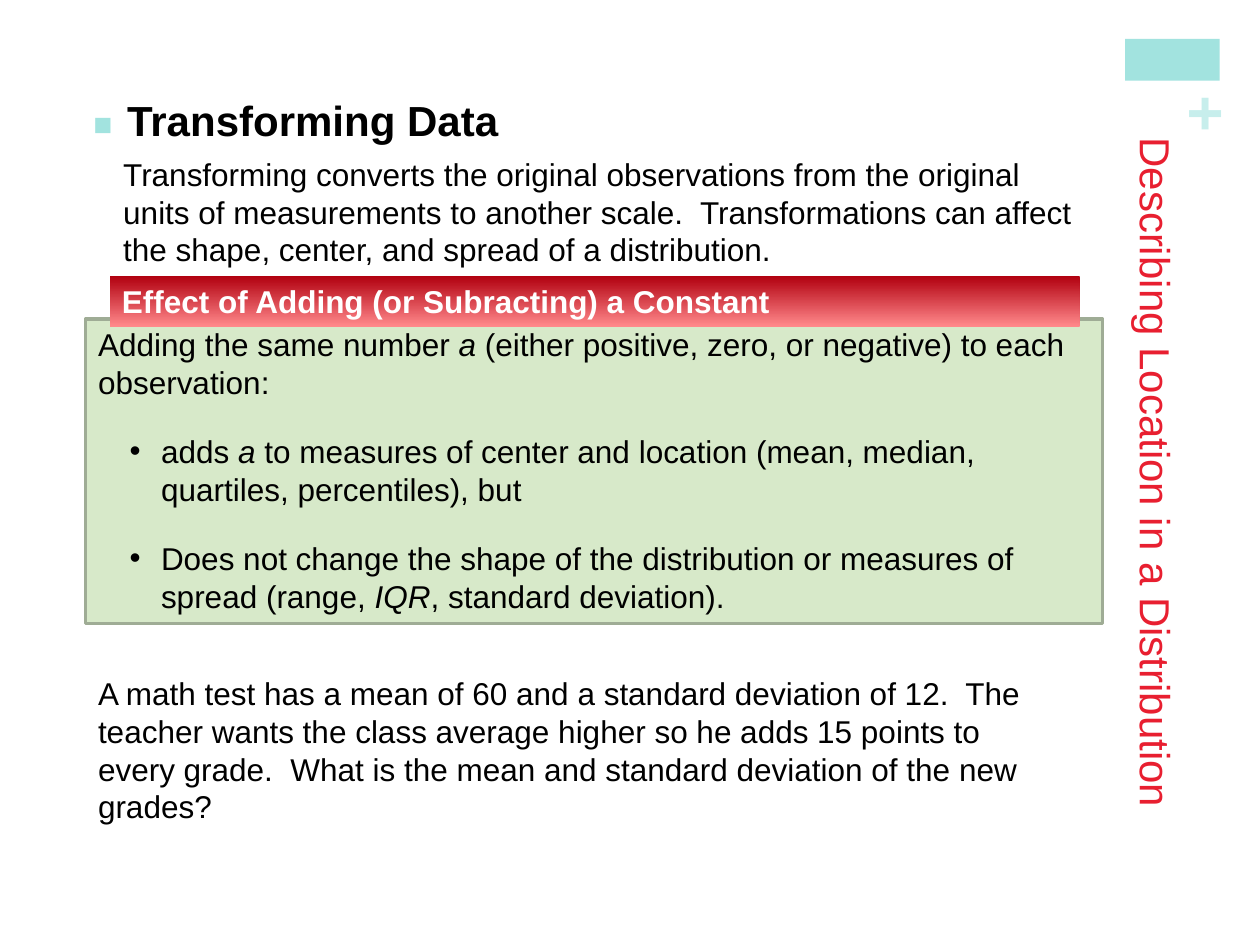
import pptx
import pptx.util
import pptx.dml.color
import pptx.enum.text
import pptx.enum.shapes
import lxml.etree

Inches, Pt = pptx.util.Inches, pptx.util.Pt
RECT = pptx.enum.shapes.MSO_SHAPE.RECTANGLE


def color(code):
    return pptx.dml.color.RGBColor.from_string(code)


def write(shape, *paras, size=18, ink="000000", bold=None, after=0, before=0,
          inset=None, bullets=(), mark="•", tint=None, left=0.5, vert=None):
    """Fill a shape with paragraphs; every second piece split by * is italic."""
    frame = shape.text_frame
    frame.word_wrap = True
    frame.auto_size = pptx.enum.text.MSO_AUTO_SIZE.NONE
    frame.vertical_anchor = pptx.enum.text.MSO_ANCHOR.TOP
    if inset is not None:
        frame.margin_left = frame.margin_right = Inches(inset)
        frame.margin_top = frame.margin_bottom = Inches(inset)
    if vert:
        frame._txBody.bodyPr.set("vert", vert)
    for n, text in enumerate(paras):
        para = frame.add_paragraph() if n else frame.paragraphs[0]
        para.alignment = pptx.enum.text.PP_ALIGN.LEFT
        para.line_spacing = 1.0
        para.space_before, para.space_after = Pt(before), Pt(after)
        if n in bullets:
            props = para._p.get_or_add_pPr()
            props.set("marL", str(Inches(left)))
            props.set("indent", str(-Inches(0.25)))
            ns = "{" + props.nsmap["a"] + "}"
            if tint:
                hue = lxml.etree.SubElement(props, ns + "buClr")
                lxml.etree.SubElement(hue, ns + "srgbClr", val=tint)
                lxml.etree.SubElement(props, ns + "buSzPct", val="75000")
            lxml.etree.SubElement(props, ns + "buFont", typeface="Arial")
            lxml.etree.SubElement(props, ns + "buChar", char=mark)
        for i, piece in enumerate(text.split("*")):
            run = para.add_run()
            run.text = piece
            font = run.font
            font.name, font.size, font.bold = "Arial", Pt(size), bold
            font.italic = i % 2 == 1
            font.color.rgb = color(ink)


deck = pptx.Presentation()
deck.slide_width, deck.slide_height = Inches(10), Inches(7.5)
slide = deck.slides.add_slide(deck.slide_layouts[1])
shapes = slide.shapes

# Corner decoration
bar = shapes.add_shape(RECT, Inches(8.93), Inches(0.31), Inches(0.75), Inches(0.33))
bar.shadow.inherit = False
bar.fill.solid()
bar.fill.fore_color.rgb = color("A2E3DF")
bar.line.fill.background()

plus = shapes.add_textbox(Inches(9.4), Inches(0.61), Inches(0.28), Inches(0.61))
plus.rotation = 270
write(plus, "+", size=36, ink="C7EEEC", bold=True, inset=0)

# Vertical title and heading
title = shapes.title
title.left, title.top = Inches(8.74), Inches(1.04)
title.width, title.height = Inches(0.74), Inches(6.18)
write(title, "Describing Location in a Distribution", size=24, ink="E81F30",
      vert="eaVert")

body = slide.placeholders[1]
body.left, body.top = Inches(4.01), Inches(-2.68)
body.width, body.height = Inches(1.41), Inches(8.07)
body.rotation = 270
write(body, "Transforming Data", size=24, bold=True, before=20,
      bullets=[0], mark="■", tint="A2E3DF", left=0.25, vert="eaVert")

# Introduction
intro = shapes.add_textbox(Inches(0.88), Inches(1.18), Inches(7.87), Inches(1.35))
write(intro, "Transforming converts the original observations from the original "
      "units of measurements to another scale.  Transformations can affect "
      "the shape, center, and spread of a distribution.")

# Rule panel with its banner
panel = shapes.add_shape(RECT, Inches(0.68), Inches(2.53), Inches(8.07), Inches(2.42))
panel.shadow.inherit = False
panel.fill.solid()
panel.fill.fore_color.rgb = color("D7E9C9")
panel.line.color.rgb = color("9FAC95")
panel.line.width = Pt(2)
write(panel,
      "Adding the same number *a* (either positive, zero, or negative) to each "
      "observation:",
      "adds *a* to measures of center and location (mean, median, quartiles, "
      "percentiles), but",
      "Does not change the shape of the distribution or measures of spread "
      "(range, *IQR*, standard deviation).",
      after=18, bullets=[1, 2])

banner = shapes.add_shape(RECT, Inches(0.87), Inches(2.19), Inches(7.7), Inches(0.4))
banner.shadow.inherit = False
banner.line.fill.background()
banner.fill.gradient()
banner.fill.gradient_angle = 270
for stop, code in zip(banner.fill.gradient_stops, ["B1000F", "FF888B"]):
    stop.color.rgb = color(code)
write(banner, "Effect of Adding (or Subracting) a Constant", ink="FFFFFF", bold=True)

# Question
task = shapes.add_textbox(Inches(0.68), Inches(5.3), Inches(7.77), Inches(1.31))
write(task, "A math test has a mean of 60 and a standard deviation of 12.  The "
      "teacher wants the class average higher so he adds 15 points to every "
      "grade.  What is the mean and standard deviation of the new grades?")

deck.save("out.pptx")
